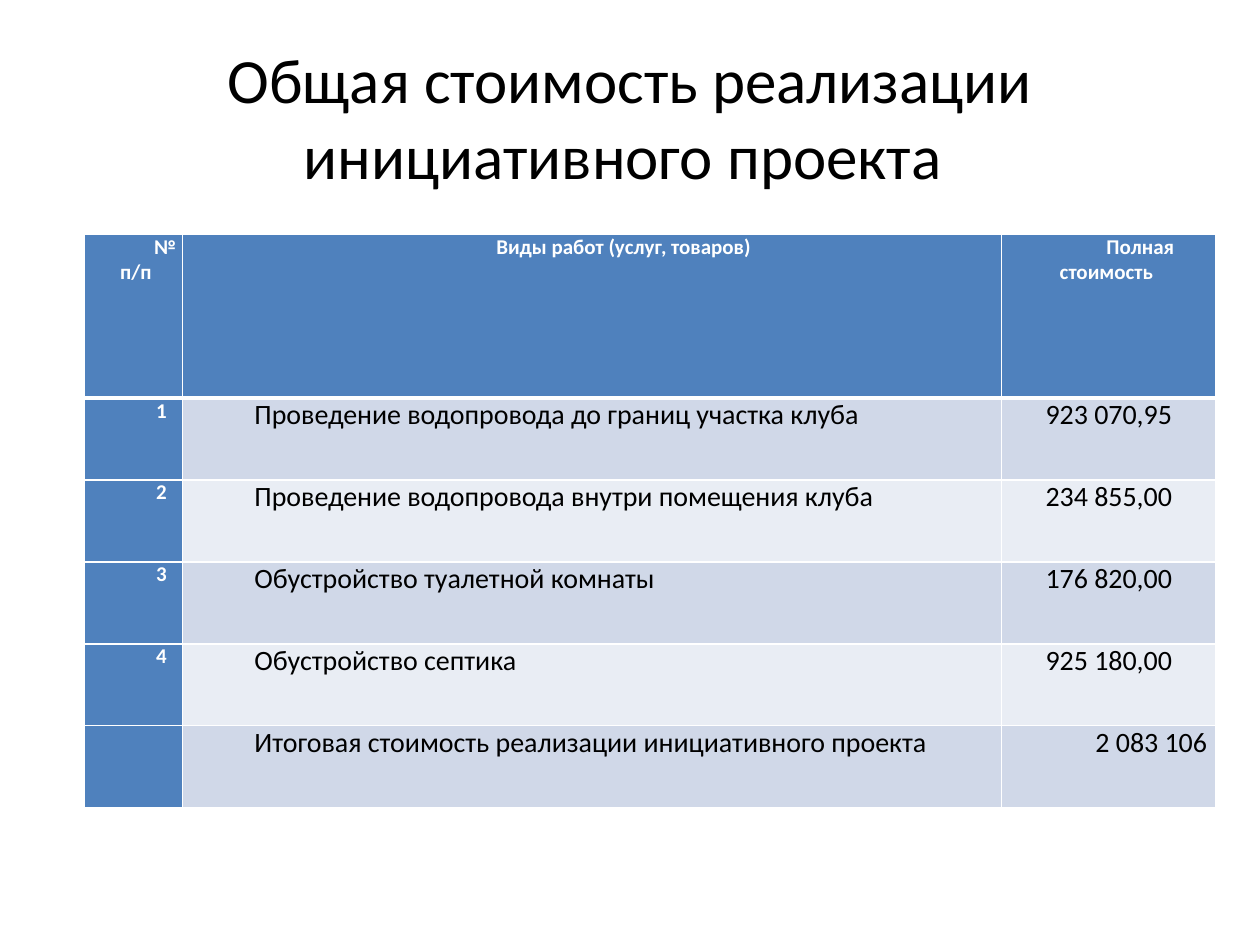
from lxml import etree
from pptx import Presentation
from pptx.dml.color import RGBColor
from pptx.enum.text import MSO_ANCHOR, PP_ALIGN
from pptx.oxml.ns import qn
from pptx.util import Inches, Pt

LEFT, CENTER, RIGHT = PP_ALIGN.LEFT, PP_ALIGN.CENTER, PP_ALIGN.RIGHT
MIDDLE = MSO_ANCHOR.MIDDLE
TITLE_ONLY = 5
WIDTH, HEIGHT = Inches(10), Inches(7.5)
WHITE, BLACK, BLUE = "FFFFFF", "000000", "4F81BD"
BANDS = ("D0D8E8", "E9EDF4")
HEADING = {"size": Pt(12), "bold": True}
ENTRY = {"size": Pt(16), "bold": False}
COLUMN_SHARES = (0.078, 0.65, 0.17)
HEADER_UNITS = 2
INDENT = Inches(0.5)

TITLE = "Общая стоимость реализации инициативного проекта "
ROWS = (
    ("№ п/п", "Виды работ (услуг, товаров)", "Полная стоимость "),
    ("1", "Проведение водопровода до границ участка клуба", "923 070,95"),
    ("2", "Проведение водопровода внутри помещения клуба", "234 855,00"),
    ("3", "Обустройство туалетной комнаты", "176 820,00"),
    ("4", "Обустройство септика", "925 180,00"),
    ("", "Итоговая стоимость реализации инициативного проекта", "2 083 106"),
)


def color(value):
    return RGBColor.from_string(value)


def write(para, text, shade, font, align):
    para.alignment = align
    if not text:
        return
    span = para.add_run()
    span.text = text
    span.font.name = "Calibri"
    span.font.color.rgb = color(shade)
    for name, value in font.items():
        setattr(span.font, name, value)


def add_title(page):
    box = page.shapes.title
    box.left, box.top = int(WIDTH * 0.05), int(HEIGHT * 0.04)
    box.width, box.height = int(WIDTH * 0.9), int(HEIGHT / 6)
    box.text_frame.vertical_anchor = MIDDLE
    write(box.text_frame.paragraphs[0], TITLE, BLACK, {"size": Pt(36)}, CENTER)


def set_borders(cell, widths):
    properties = cell._tc.get_or_add_tcPr()
    for side, width in widths.items():
        line = etree.SubElement(properties, qn(f"a:ln{side}"), w=str(Pt(width)))
        fill = etree.SubElement(line, qn("a:solidFill"))
        etree.SubElement(fill, qn("a:srgbClr"), val=WHITE)


def format_cell(cell, text, row, column):
    is_header, is_number, is_cost = row == 0, column == 0, column == 2
    is_heading = is_header or is_number
    margins = {"margin_left": Inches(0.07), "margin_right": Inches(0.07),
               "margin_top": 0, "margin_bottom": 0}
    for name, value in margins.items():
        setattr(cell, name, value)
    set_borders(cell, {"L": 1, "R": 1, "T": 3 if row == 1 else 1,
                       "B": 3 if is_header else 1})
    cell.fill.solid()
    cell.fill.fore_color.rgb = color(BLUE if is_heading else BANDS[(row - 1) % 2])

    align = CENTER if is_header or is_cost else LEFT
    if is_cost and row == len(ROWS) - 1:
        align = RIGHT
    para = cell.text_frame.paragraphs[0]
    write(para, text, WHITE if is_heading else BLACK,
          HEADING if is_heading else ENTRY, align)
    if is_header or not is_cost:
        para._p.get_or_add_pPr().set("indent", str(INDENT))


def add_cost_table(page):
    unit = int(HEIGHT * 0.65 / 7.5)
    units = len(ROWS) - 1 + HEADER_UNITS
    table = page.shapes.add_table(
        len(ROWS), len(COLUMN_SHARES), int(WIDTH * 0.067), int(HEIGHT * 0.248),
        int(WIDTH * sum(COLUMN_SHARES)), unit * units).table
    for column, share in zip(table.columns, COLUMN_SHARES):
        column.width = int(WIDTH * share)
    for row, texts in enumerate(ROWS):
        table.rows[row].height = unit * (HEADER_UNITS if row == 0 else 1)
        for column, text in enumerate(texts):
            format_cell(table.cell(row, column), text, row, column)


def main():
    deck = Presentation()
    deck.slide_width, deck.slide_height = WIDTH, HEIGHT
    page = deck.slides.add_slide(deck.slide_layouts[TITLE_ONLY])
    add_title(page)
    add_cost_table(page)
    deck.save("out.pptx")


if __name__ == "__main__":
    main()
